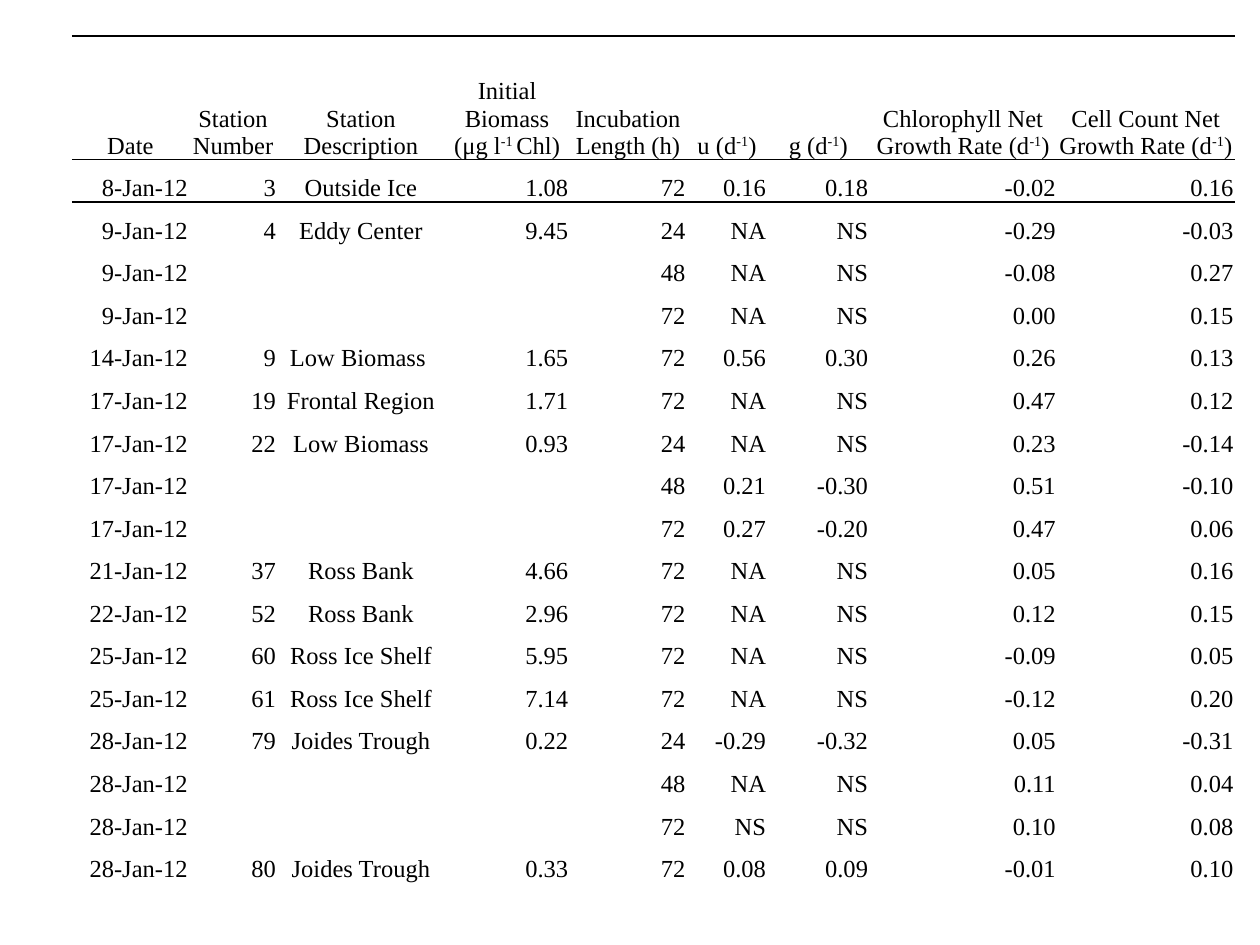
from dataclasses import dataclass
from typing import NamedTuple

from lxml import etree
from pptx import Presentation, util as u
from pptx.dml.color import RGBColor
from pptx.enum import text
from pptx.oxml.ns import qn


@dataclass(frozen=True)
class Theme:
    font: str = "Times New Roman"
    size: float = 14
    ink: str = "000000"
    rule: float = 1
    inset: float = 0.01
    table_style: str = "{2D5ABB26-0587-4C30-8999-92F81FD0307C}"


class Column(NamedTuple):
    heading: str  # text between carets is superscript
    width: float
    align: text.PP_ALIGN = text.PP_ALIGN.RIGHT


class Sample(NamedTuple):
    date: str
    station: str
    description: str
    biomass: str
    hours: str
    growth: str
    grazing: str
    chlorophyll_rate: str
    cell_rate: str


def follow_up(date: str, *readings: str) -> Sample:
    """A later reading at the station named in the row above."""
    return Sample(date, "", "", "", *readings)


THEME = Theme()
SLIDE_WIDTH, SLIDE_HEIGHT = 10, 7.5
LEFT, TOP = 0.057 * SLIDE_WIDTH, 0.038 * SLIDE_HEIGHT
HEADER_HEIGHT, ROW_HEIGHT = 0.98, 0.338

COLUMNS = [
    Column("Date", 0.93),
    Column("Station Number", 0.7),
    Column("Station Description", 1.33, text.PP_ALIGN.CENTER),
    Column("Initial Biomass (μg l^-1 ^Chl)", 0.99),
    Column("Incubation Length (h)", 0.93),
    Column("u (d^-1^)", 0.64),
    Column("g (d^-1^)", 0.81),
    Column("Chlorophyll Net Growth Rate (d^-1^)", 1.49),
    Column("Cell Count Net Growth Rate (d^-1^)", 1.41),
]

SAMPLES = [
    Sample("8-Jan-12", "3", "Outside Ice", "1.08", "72", "0.16", "0.18", "-0.02", "0.16"),
    Sample("9-Jan-12", "4", "Eddy Center", "9.45", "24", "NA", "NS", "-0.29", "-0.03"),
    follow_up("9-Jan-12", "48", "NA", "NS", "-0.08", "0.27"),
    follow_up("9-Jan-12", "72", "NA", "NS", "0.00", "0.15"),
    Sample("14-Jan-12", "9", "Low Biomass ", "1.65", "72", "0.56", "0.30", "0.26", "0.13"),
    Sample("17-Jan-12", "19", "Frontal Region", "1.71", "72", "NA", "NS", "0.47", "0.12"),
    Sample("17-Jan-12", "22", "Low Biomass", "0.93", "24", "NA", "NS", "0.23", "-0.14"),
    follow_up("17-Jan-12", "48", "0.21", "-0.30", "0.51", "-0.10"),
    follow_up("17-Jan-12", "72", "0.27", "-0.20", "0.47", "0.06"),
    Sample("21-Jan-12", "37", "Ross Bank", "4.66", "72", "NA", "NS", "0.05", "0.16"),
    Sample("22-Jan-12", "52", "Ross Bank", "2.96", "72", "NA", "NS", "0.12", "0.15"),
    Sample("25-Jan-12", "60", "Ross Ice Shelf", "5.95", "72", "NA", "NS", "-0.09", "0.05"),
    Sample("25-Jan-12", "61", "Ross Ice Shelf", "7.14", "72", "NA", "NS", "-0.12", "0.20"),
    Sample("28-Jan-12", "79", "Joides Trough", "0.22", "24", "-0.29", "-0.32", "0.05", "-0.31"),
    follow_up("28-Jan-12", "48", "NA", "NS", "0.11", "0.04"),
    follow_up("28-Jan-12", "72", "NS", "NS", "0.10", "0.08"),
    Sample("28-Jan-12", "80", "Joides Trough", "0.33", "72", "0.08", "0.09", "-0.01", "0.10"),
]


def write_cell(cell, content: str, align: text.PP_ALIGN) -> None:
    """Write content, raising whatever stands between carets."""
    cell.fill.background()
    cell.vertical_anchor = text.MSO_ANCHOR.BOTTOM
    cell.margin_left = cell.margin_right = cell.margin_top = u.Inches(THEME.inset)
    cell.margin_bottom = 0
    para = cell.text_frame.paragraphs[0]
    para.alignment = align
    for index, piece in enumerate(content.split("^")):
        if not piece:
            continue
        span = para.add_run()
        span.text = piece
        span.font.name = THEME.font
        span.font.size = u.Pt(THEME.size)
        span.font.color.rgb = RGBColor.from_string(THEME.ink)
        if index % 2:
            span.font._element.set("baseline", "30000")


def rule_cell(cell, *sides: str) -> None:
    """Draw a border on the given sides: T for top, B for bottom."""
    properties = cell._tc.get_or_add_tcPr()
    for index, side in enumerate(sides):
        line = etree.Element(qn(f"a:ln{side}"), w=str(u.Pt(THEME.rule)))
        fill = etree.SubElement(line, qn("a:solidFill"))
        etree.SubElement(fill, qn("a:srgbClr"), val=THEME.ink)
        properties.insert(index, line)


def add_sample_table(page) -> None:
    width = sum(column.width for column in COLUMNS)
    height = HEADER_HEIGHT + ROW_HEIGHT * len(SAMPLES)
    table = page.shapes.add_table(
        len(SAMPLES) + 1, len(COLUMNS),
        u.Inches(LEFT), u.Inches(TOP), u.Inches(width), u.Inches(height),
    ).table
    table.first_row = table.horz_banding = False
    table._tbl.tblPr.find(qn("a:tableStyleId")).text = THEME.table_style

    for index, row in enumerate(table.rows):
        row.height = u.Inches(ROW_HEIGHT if index else HEADER_HEIGHT)
    for index, column in enumerate(COLUMNS):
        table.columns[index].width = u.Inches(column.width)
        header = table.cell(0, index)
        write_cell(header, column.heading, text.PP_ALIGN.CENTER)
        rule_cell(header, "T", "B")
        for row, sample in enumerate(SAMPLES, start=1):
            write_cell(table.cell(row, index), sample[index], column.align)
        rule_cell(table.cell(1, index), "T")


def main() -> None:
    deck = Presentation()
    deck.slide_width, deck.slide_height = u.Inches(SLIDE_WIDTH), u.Inches(SLIDE_HEIGHT)
    add_sample_table(deck.slides.add_slide(deck.slide_layouts[6]))
    deck.save("out.pptx")


if __name__ == "__main__":
    main()
